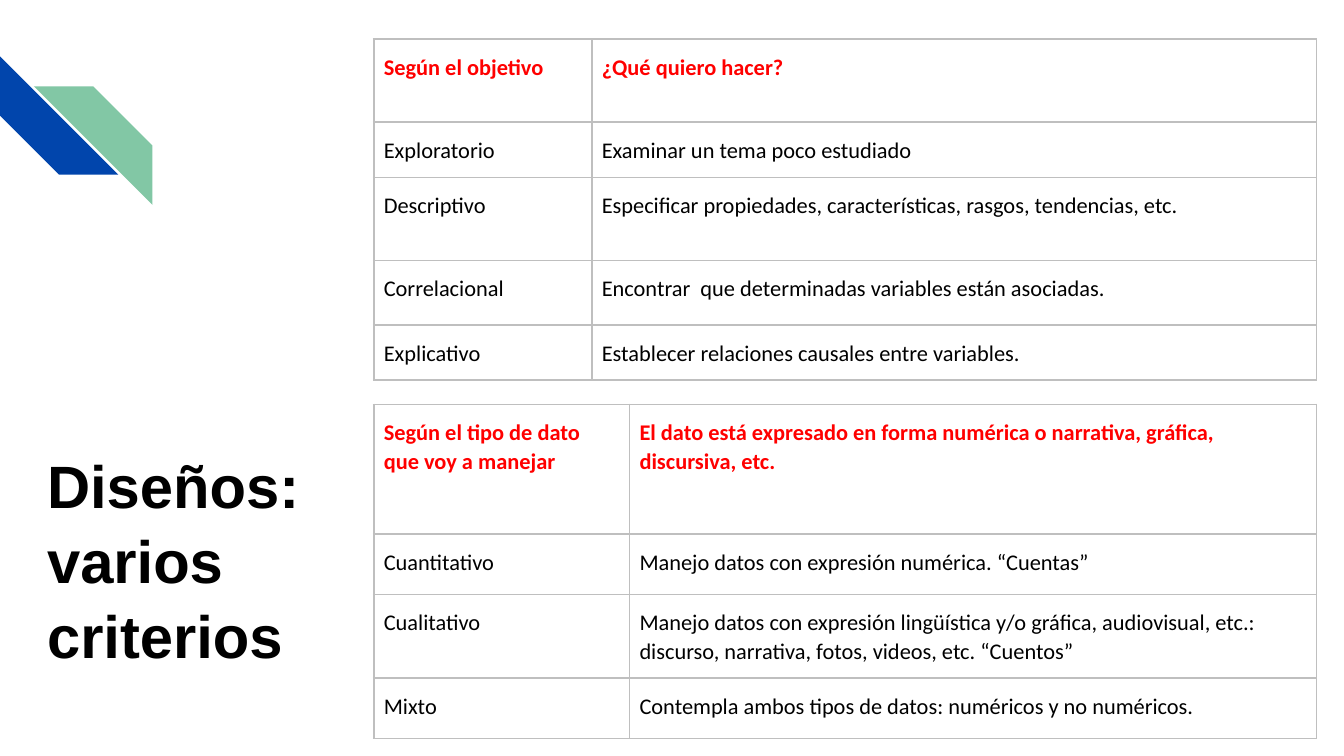
from lxml import etree
from pptx import Presentation
from pptx.dml.color import RGBColor
from pptx.enum.shapes import MSO_SHAPE
from pptx.enum.text import MSO_ANCHOR, MSO_AUTO_SIZE, PP_ALIGN
from pptx.oxml.ns import qn
from pptx.util import Pt

STRIPE = MSO_SHAPE.DIAGONAL_STRIPE
TOP = MSO_ANCHOR.TOP
LEFT = PP_ALIGN.LEFT
GROW = MSO_AUTO_SIZE.SHAPE_TO_FIT_TEXT

BLACK, RED, GRAY = "000000", "FF0000", "BFBFBF"
BLUE, GREEN = "0145AC", "82C7A5"
STRIPE_SIZE = 63.4
TABLE_LEFT = 200.2
CELL_FORMAT = {
    "margin_left": Pt(5.4),
    "margin_right": Pt(5.4),
    "margin_top": Pt(7.2),
    "margin_bottom": Pt(7.2),
    "vertical_anchor": TOP,
}
PARAGRAPH_FORMAT = {"line_spacing": 1.05, "space_after": Pt(10), "alignment": LEFT}

OBJECTIVE_ROWS = [
    ("Según el objetivo", "¿Qué quiero hacer?"),
    ("Exploratorio", "Examinar un tema poco estudiado"),
    ("Descriptivo", "Especificar propiedades, características, rasgos, tendencias, etc."),
    ("Correlacional", "Encontrar  que determinadas variables están asociadas."),
    ("Explicativo", "Establecer relaciones causales entre variables."),
]
DATA_ROWS = [
    (
        "Según el tipo de dato que voy a manejar",
        "El dato está expresado en forma numérica o narrativa, gráfica, discursiva, etc.",
    ),
    ("Cuantitativo", "Manejo datos con expresión numérica. “Cuentas”"),
    (
        "Cualitativo",
        "Manejo datos con expresión lingüística y/o gráfica, audiovisual, etc.: "
        "discurso, narrativa, fotos, videos, etc. “Cuentos”",
    ),
    ("Mixto", "Contempla ambos tipos de datos: numéricos y no numéricos."),
]


def color(value):
    return RGBColor.from_string(value)


def apply_format(target, values):
    for name, value in values.items():
        setattr(target, name, value)


def format_font(font, name, size, bold, font_color):
    apply_format(font, {"name": name, "size": Pt(size), "bold": bold})
    font.color.rgb = color(font_color)


def add_stripe(slide, left, top, rotation, fill):
    shape = slide.shapes.add_shape(
        STRIPE, Pt(left), Pt(top), Pt(STRIPE_SIZE), Pt(STRIPE_SIZE)
    )
    shape.rotation = rotation
    shape.shadow.inherit = False
    shape.fill.solid()
    shape.fill.fore_color.rgb = color(fill)
    shape.line.fill.background()


def set_title(slide, text):
    title = slide.shapes.title
    apply_format(
        title,
        {"left": Pt(18), "top": Pt(234.7), "width": Pt(226.8), "height": Pt(123.8)},
    )
    frame = title.text_frame
    frame.text = text
    apply_format(
        frame, {"word_wrap": True, "vertical_anchor": TOP, "auto_size": GROW}
    )
    paragraph = frame.paragraphs[0]
    apply_format(paragraph, {"alignment": LEFT, "line_spacing": 1.05})
    format_font(paragraph.font, "Arial", 32, True, BLACK)


def add_borders(cell):
    properties = cell._tc.get_or_add_tcPr()
    for position, side in enumerate(("a:lnL", "a:lnR", "a:lnT", "a:lnB")):
        line = etree.Element(qn(side), w=str(Pt(1)))
        fill = etree.SubElement(line, qn("a:solidFill"))
        etree.SubElement(fill, qn("a:srgbClr"), val=GRAY)
        properties.insert(position, line)


def fill_cell(cell, text, is_header):
    apply_format(cell, CELL_FORMAT)
    cell.fill.background()
    add_borders(cell)
    cell.text = text
    paragraph = cell.text_frame.paragraphs[0]
    apply_format(paragraph, PARAGRAPH_FORMAT)
    format_font(paragraph.font, "Calibri", 12, is_header, RED if is_header else BLACK)


def add_criteria_table(slide, top, widths, heights, rows):
    table = slide.shapes.add_table(
        len(rows), len(widths), Pt(TABLE_LEFT), Pt(top), Pt(sum(widths)), Pt(sum(heights))
    ).table
    apply_format(table, {"first_row": False, "horz_banding": False})
    for column, width in zip(table.columns, widths):
        column.width = Pt(width)
    for row_index, (row, height, texts) in enumerate(zip(table.rows, heights, rows)):
        row.height = Pt(height)
        for cell, text in zip(row.cells, texts):
            fill_cell(cell, text, row_index == 0)


def main():
    presentation = Presentation()
    apply_format(presentation, {"slide_width": Pt(720), "slide_height": Pt(405)})
    slide = presentation.slides.add_slide(presentation.slide_layouts[5])
    set_title(slide, "Diseños: varios criterios")
    add_stripe(slide, 0, 30.2, 270, BLUE)
    add_stripe(slide, 18.2, 46.3, 90, GREEN)
    add_criteria_table(
        slide, 20.9, (116.8, 388.2), (44.6, 28.1, 44.6, 34.6, 28.1), OBJECTIVE_ROWS
    )
    add_criteria_table(
        slide, 216.7, (137, 368), (69.4, 32.5, 44.2, 32.5), DATA_ROWS
    )
    presentation.save("out.pptx")


if __name__ == "__main__":
    main()
